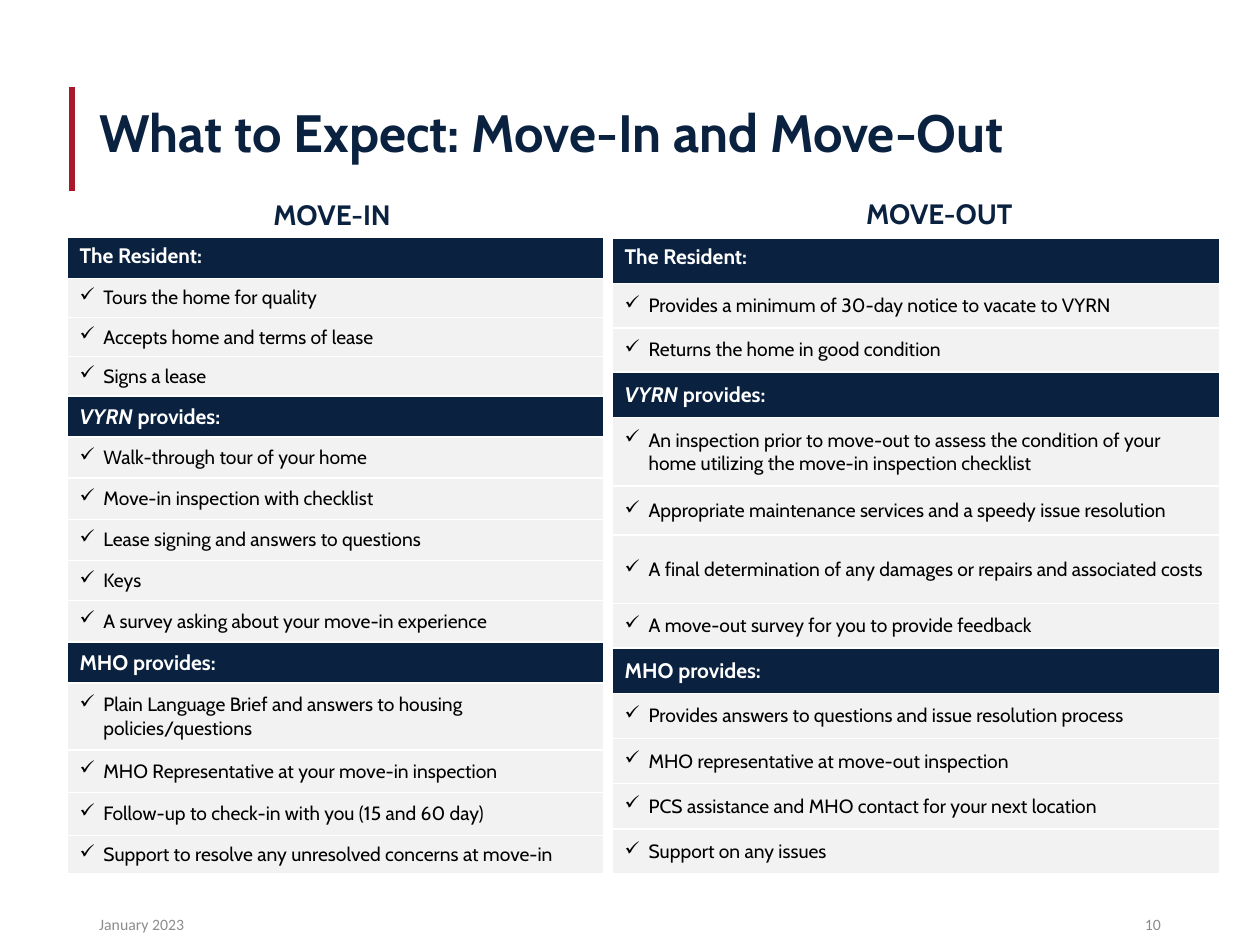
from lxml.etree import SubElement
from pptx import Presentation
from pptx.dml.color import RGBColor
from pptx.enum.shapes import MSO_CONNECTOR as Connector
from pptx.enum.text import MSO_ANCHOR as Anchor, PP_ALIGN as Align
from pptx.oxml.ns import qn
from pptx.util import Cm, Pt

NAVY = RGBColor(0x0A, 0x22, 0x40)
RED = RGBColor(0xAA, 0x18, 0x2C)
PALE = RGBColor(0xF2, 0xF2, 0xF2)
GRAY = RGBColor(0x8C, 0x8C, 0x8C)
WHITE = RGBColor(0xFF, 0xFF, 0xFF)
BLACK = RGBColor(0, 0, 0)

TITLE = dict(name="Cabin", size=Pt(30), bold=True, color=NAVY)
COLUMN_HEADING = dict(name="Cabin", size=Pt(16), bold=True, color=NAVY)
SECTION = dict(name="Cabin", size=Pt(12), bold=True, italic=False, color=WHITE)
ITEM = dict(name="Cabin", size=Pt(11), bold=False, color=BLACK)
FOOTER = dict(name="Calibri", size=Pt(9), color=GRAY)

MOVE_IN = [
    (("", "The Resident:"), 0.83, [
        ("Tours the home for quality", 0.79),
        ("Accepts home and terms of lease", 0.79),
        ("Signs a lease", 0.79)]),
    (("VYRN ", "provides:"), 0.83, [
        ("Walk-through tour of your home", 0.83),
        ("Move-in inspection with checklist", 0.83),
        ("Lease signing and answers to questions", 0.83),
        ("Keys", 0.81),
        ("A survey asking about your move-in experience", 0.83)]),
    (("", "MHO provides:"), 0.83, [
        ("Plain Language Brief and answers to housing policies/questions", 1.35),
        ("MHO Representative at your move-in inspection", 0.86),
        ("Follow-up to check-in with you (15 and 60 day)", 0.86),
        ("Support to resolve any unresolved concerns at move-in", 0.78)]),
]
MOVE_OUT = [
    (("", "The Resident:"), 0.92, [
        ("Provides a minimum of 30-day notice to vacate to VYRN", 0.89),
        ("Returns the home in good condition", 0.89)]),
    (("VYRN ", "provides:"), 0.92, [
        ("An inspection prior to move-out to assess the condition of your "
         "home utilizing the move-in inspection checklist", 1.38),
        ("Appropriate maintenance services and a speedy issue resolution", 0.99),
        ("A final determination of any damages or repairs and associated costs", 1.38),
        ("A move-out survey for you to provide feedback", 0.89)]),
    (("", "MHO provides:"), 0.92, [
        ("Provides answers to questions and issue resolution process", 0.91),
        ("MHO representative at move-out inspection", 0.91),
        ("PCS assistance and MHO contact for your next location", 0.91),
        ("Support on any issues", 0.91)]),
]


def add_span(para, text, style):
    span = para.add_run()
    span.text = text
    for key, value in style.items():
        if key == "color":
            span.font.color.rgb = value
        else:
            setattr(span.font, key, value)


def add_label(page, box, text, style, align):
    frame = page.shapes.add_textbox(*map(Cm, box)).text_frame
    frame.word_wrap = True
    para = frame.paragraphs[0]
    para.alignment = align
    add_span(para, text, style)


def add_check(para):
    properties = para._p.get_or_add_pPr()
    properties.set("marL", str(Cm(0.48)))
    properties.set("indent", str(-Cm(0.48)))
    SubElement(properties, qn("a:buChar")).set("char", "✓")


def title_region(page, left, top, width, height):
    rule = page.shapes.add_connector(
        Connector.STRAIGHT, Cm(left), Cm(top), Cm(left), Cm(top + height))
    rule.line.color.rgb = RED
    rule.line.width = Pt(3)
    SubElement(rule._element.spPr, qn("a:effectLst"))

    title = page.shapes.title
    place = dict(left=left + 0.3, top=top + 0.16, width=width - 0.3, height=1.63)
    for key, value in place.items():
        setattr(title, key, Cm(value))
    frame = title.text_frame
    frame.word_wrap = True
    frame.vertical_anchor = Anchor.MIDDLE
    para = frame.paragraphs[0]
    para.alignment = Align.LEFT
    para.line_spacing = 0.9
    add_span(para, "What to Expect: Move-In and Move-Out", TITLE)


def checklist_region(page, left, top, width, sections):
    rows = []
    for heading, height, items in sections:
        rows.append((heading, height, True))
        rows += [(("", text), size, False) for text, size in items]
    total = sum(height for _, height, _ in rows)
    table = page.shapes.add_table(
        len(rows), 1, Cm(left), Cm(top), Cm(width), Cm(total)).table
    for index, (words, height, is_heading) in enumerate(rows):
        table.rows[index].height = Cm(height)
        cell = table.cell(index, 0)
        cell.vertical_anchor = Anchor.MIDDLE if index else Anchor.TOP
        cell.fill.solid()
        cell.fill.fore_color.rgb = NAVY if is_heading else PALE
        para = cell.text_frame.paragraphs[0]
        style = SECTION if is_heading else ITEM
        if not is_heading:
            add_check(para)
        emphasis, text = words
        if emphasis:
            add_span(para, emphasis, {**style, "italic": True})
        add_span(para, text, style)


def footer_region(page, left, top, width):
    label_width = 5.72
    add_label(page, (left, top, label_width, 1.02), "January 2023", FOOTER, Align.LEFT)
    add_label(page, (left + width - label_width, top, label_width, 1.02),
              "10", FOOTER, Align.RIGHT)


def main():
    deck = Presentation()
    deck.slide_width, deck.slide_height = Cm(25.4), Cm(19.05)
    page = deck.slides.add_slide(deck.slide_layouts[5])
    title_region(page, 1.45, 1.75, 22.2, 2.11)
    add_label(page, (1.4, 3.86, 10.59, 0.94), "MOVE-IN", COLUMN_HEADING, Align.CENTER)
    checklist_region(page, 1.35, 4.78, 10.82, MOVE_IN)
    add_label(page, (13.26, 3.84, 11.35, 0.94), "MOVE-OUT", COLUMN_HEADING, Align.CENTER)
    checklist_region(page, 12.34, 4.8, 12.24, MOVE_OUT)
    footer_region(page, 1.75, 18.31, 21.9)
    deck.save("out.pptx")


if __name__ == "__main__":
    main()
